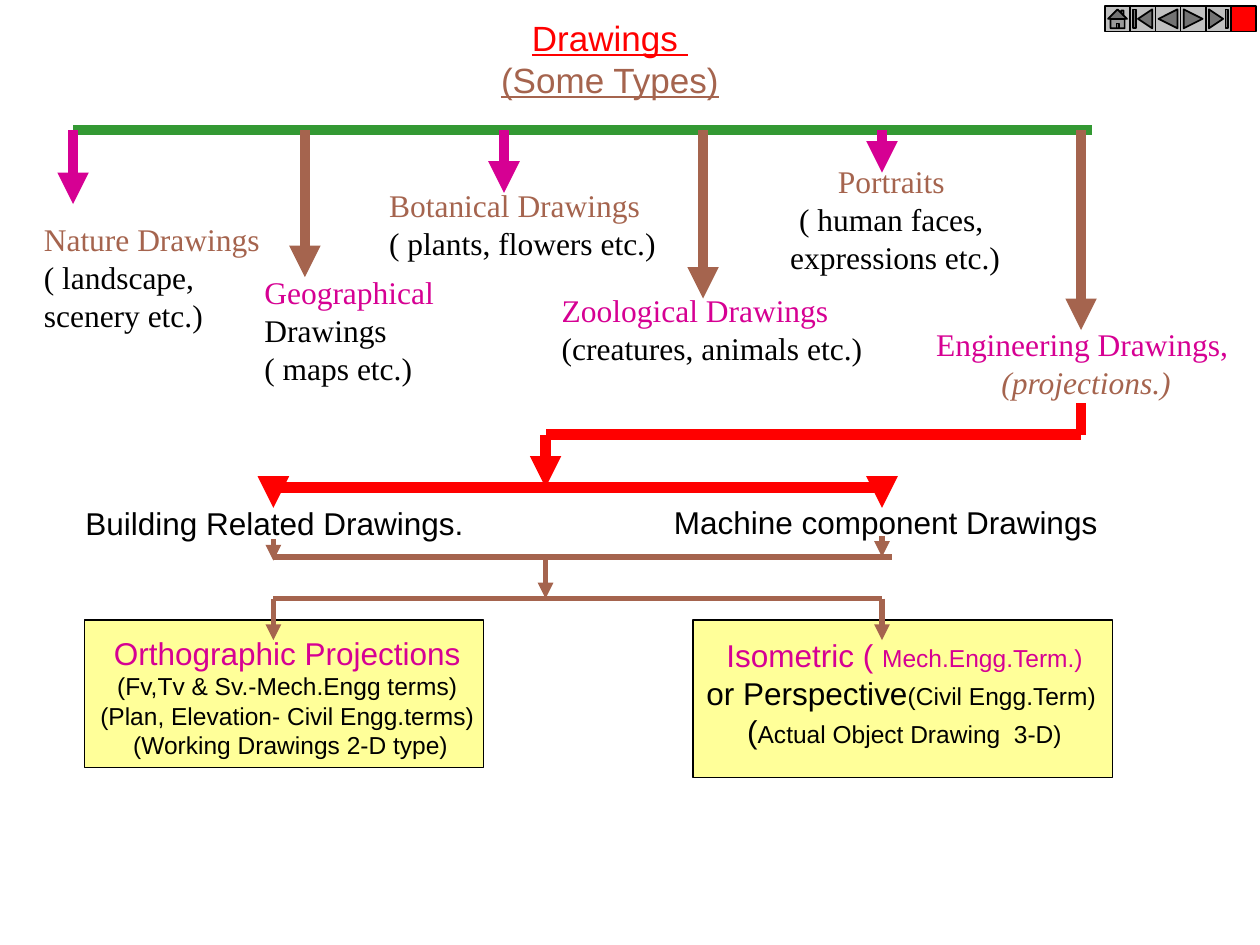
from lxml import etree
from pptx import Presentation
from pptx.dml.color import RGBColor
from pptx.enum.shapes import MSO_CONNECTOR, MSO_SHAPE
from pptx.enum.text import MSO_AUTO_SIZE, PP_ALIGN
from pptx.oxml.ns import qn
from pptx.util import Inches, Pt

STRAIGHT = MSO_CONNECTOR.STRAIGHT
RECTANGLE = MSO_SHAPE.RECTANGLE
LEFT, CENTER = PP_ALIGN.LEFT, PP_ALIGN.CENTER
FIT_SHAPE = MSO_AUTO_SIZE.SHAPE_TO_FIT_TEXT
BUTTONS = [
    MSO_SHAPE.ACTION_BUTTON_HOME,
    MSO_SHAPE.ACTION_BUTTON_BEGINNING,
    MSO_SHAPE.ACTION_BUTTON_BACK_OR_PREVIOUS,
    MSO_SHAPE.ACTION_BUTTON_FORWARD_OR_NEXT,
    MSO_SHAPE.ACTION_BUTTON_END,
    MSO_SHAPE.ACTION_BUTTON_CUSTOM,
]
COLORS = {
    "black": "000000", "red": "FF0000", "brown": "A5644E",
    "magenta": "D60093", "green": "339933", "yellow": "FFFF99",
    "gray": "C0C0C0",
}
SERIF, SANS = "Times New Roman", "Arial"

# Shared columns and levels of the tree, in inches
BUILDING_X, MIDDLE_X, MACHINE_X, ENGINEERING_X = 2.17, 4.33, 7, 8.58
TOP_BAR_Y, RED_TURN_Y, RED_BAR_Y, JOIN_Y, SPLIT_Y = 1.03, 3.45, 3.87, 4.42, 4.75


def rgb(name):
    return RGBColor.from_string(COLORS[name])


def add_box(shapes, kind, left, top, width, height, fill, line_width):
    shape = shapes.add_shape(kind, Inches(left), Inches(top), Inches(width), Inches(height))
    shape.shadow.inherit = False
    shape.fill.solid()
    shape.fill.fore_color.rgb = rgb(fill)
    shape.line.color.rgb = rgb("black")
    shape.line.width = Pt(line_width)


def add_line(shapes, start, end, color, width=6, arrow=False):
    connector = shapes.add_connector(STRAIGHT, *(Inches(value) for value in start + end))
    connector.line.color.rgb = rgb(color)
    connector.line.width = Pt(width)
    if arrow:
        line = connector.line._get_or_add_ln()
        etree.SubElement(line, qn("a:tailEnd"), type="triangle")
    etree.SubElement(connector._element.spPr, qn("a:effectLst"))


def add_text(shapes, left, top, width, height, lines, font=SERIF, size=18,
             align=LEFT, underline=False):
    """Each line is a list of runs: (text, color, optional size, optional italic)."""
    box = shapes.add_textbox(Inches(left), Inches(top), Inches(width), Inches(height))
    frame = box.text_frame
    frame.word_wrap = False
    frame.auto_size = FIT_SHAPE
    for index, runs in enumerate(lines):
        paragraph = frame.paragraphs[0] if index == 0 else frame.add_paragraph()
        paragraph.alignment = align
        for text, color, *extra in runs:
            run = paragraph.add_run()
            run.text = text
            run.font.name = font
            run.font.size = Pt(extra[0] if extra else size)
            run.font.color.rgb = rgb(color)
            run.font.underline = underline
            run.font.italic = len(extra) > 1 and extra[1]


def add_drawing_types(shapes):
    labels = [
        (0.25, 1.7, 2.1, 1, LEFT, [[("Nature Drawings", "brown")],
                                   [("( landscape,", "black")],
                                   [("scenery etc.)", "black")]]),
        (2, 2.12, 1.71, 1, LEFT, [[("Geographical", "magenta")],
                                  [("Drawings", "black")],
                                  [("( maps etc.)", "black")]]),
        (2.99, 1.43, 2.37, 0.7, LEFT, [[("Botanical Drawings", "brown")],
                                       [("( plants, flowers etc.)", "black")]]),
        (4.36, 2.26, 2.59, 0.7, LEFT, [[("Zoological Drawings", "magenta")],
                                       [("(creatures, animals etc.)", "black")]]),
        (6.17, 1.24, 1.87, 1, CENTER, [[("Portraits ", "brown")],
                                       [("( human faces, ", "black")],
                                       [("expressions etc.)", "black")]]),
        (7.26, 2.53, 2.72, 0.7, CENTER, [[("Engineering Drawings, ", "magenta")],
                                         [("(projections.)", "brown", 18, True)]]),
    ]
    for left, top, width, height, align, lines in labels:
        add_text(shapes, left, top, width, height, lines, align=align)

    # Bar with one arrow per type, in alternating colours
    add_line(shapes, (0.58, TOP_BAR_Y), (8.67, TOP_BAR_Y), "green")
    arrows = [(0.58, 1.62), (2.42, 2.2), (4, 1.53), (5.58, 2.37),
              (MACHINE_X, 1.37), (ENGINEERING_X, 2.62)]
    for index, (x, tip) in enumerate(arrows):
        color = "brown" if index % 2 else "magenta"
        add_line(shapes, (x, TOP_BAR_Y), (x, tip), color, arrow=True)


def add_engineering_branch(shapes):
    # Red path from engineering drawings to its two kinds
    add_line(shapes, (ENGINEERING_X, 3.2), (ENGINEERING_X, RED_TURN_Y), "red")
    add_line(shapes, (ENGINEERING_X, RED_TURN_Y), (MIDDLE_X, RED_TURN_Y), "red")
    add_line(shapes, (MIDDLE_X, RED_TURN_Y), (MIDDLE_X, RED_BAR_Y), "red", arrow=True)
    add_line(shapes, (BUILDING_X, RED_BAR_Y), (MACHINE_X, RED_BAR_Y), "red")
    for x in (MACHINE_X, BUILDING_X):
        add_line(shapes, (x, RED_BAR_Y), (x, 4.03), "red", arrow=True)

    add_text(shapes, 5.25, 3.94, 3.56, 0.4,
             [[("Machine component Drawings", "black")]], font=SANS)
    add_text(shapes, 0.58, 3.95, 3.2, 0.4,
             [[("Building Related Drawings.", "black")]], font=SANS)


def add_projection_texts(shapes):
    add_text(shapes, 0.67, 4.98, 3.22, 1.1, [
        [("Orthographic Projections", "magenta", 18)],
        [("(Fv,Tv & Sv.-Mech.Engg terms)", "black")],
        [("(Plan, Elevation- Civil Engg.terms)", "black")],
        [(" (Working Drawings 2-D type)", "black")],
    ], font=SANS, size=14, align=CENTER)
    add_text(shapes, 5.5, 5, 3.36, 1, [
        [("Isometric ( ", "magenta"), ("Mech.Engg.Term.)", "magenta", 14)],
        [("or Perspective", "black"), ("(Civil Engg.Term) ", "black", 14)],
        [("(", "black"), ("Actual Object Drawing  3-D)", "black", 14)],
    ], font=SANS, align=CENTER)


def add_projection_branch(shapes):
    # Both kinds join, then split into the two projection boxes
    for x, top, tip in ((BUILDING_X, 4.28, 4.45), (MACHINE_X, 4.25, JOIN_Y)):
        add_line(shapes, (x, top), (x, tip), "brown", 3, arrow=True)
    branch = shapes.add_group_shape().shapes
    add_line(branch, (BUILDING_X, JOIN_Y), (7.08, JOIN_Y), "brown", 3)
    add_line(branch, (MIDDLE_X, JOIN_Y), (MIDDLE_X, SPLIT_Y), "brown", 3, arrow=True)
    add_line(branch, (BUILDING_X, SPLIT_Y), (MACHINE_X, SPLIT_Y), "brown", 3)
    for x in (BUILDING_X, MACHINE_X):
        add_line(branch, (x, SPLIT_Y), (x, 5.08), "brown", 3, arrow=True)


def add_navigation(shapes):
    buttons = shapes.add_group_shape().shapes
    size = 0.2
    for index, kind in enumerate(BUTTONS):
        fill = "red" if kind == BUTTONS[-1] else "gray"
        add_box(buttons, kind, 8.77 + index * size, 0.05, size, size, fill, 1)


def main():
    presentation = Presentation()
    presentation.slide_width = Inches(10)
    presentation.slide_height = Inches(7.5)
    slide = presentation.slides.add_slide(presentation.slide_layouts[6])
    shapes = slide.shapes

    # Projection boxes lie behind everything else
    add_box(shapes, RECTANGLE, 5.5, 4.92, 3.33, 1.25, "yellow", 0.75)
    add_box(shapes, RECTANGLE, 0.67, 4.92, 3.17, 1.17, "yellow", 0.75)

    # Title
    add_text(shapes, 3.83, 0.08, 2.02, 0.77,
             [[("Drawings ", "red")], [("(Some Types)", "brown")]],
             font=SANS, size=20, align=CENTER, underline=True)

    add_drawing_types(shapes)
    add_engineering_branch(shapes)
    add_projection_texts(shapes)
    add_projection_branch(shapes)
    add_navigation(shapes)
    presentation.save("out.pptx")


if __name__ == "__main__":
    main()
